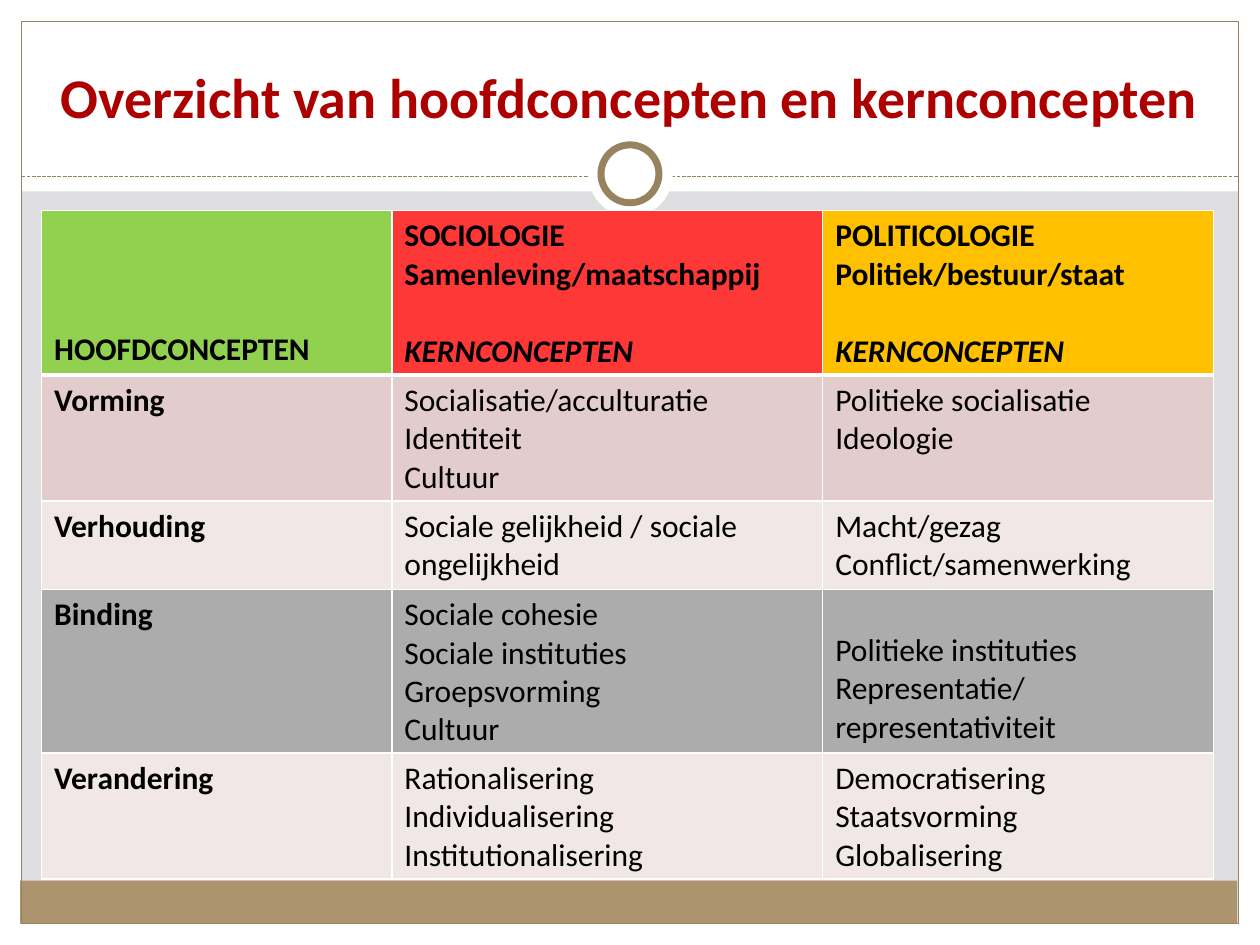
from typing import NamedTuple, Optional

from lxml import etree
from pptx import Presentation
from pptx import util as u
from pptx.dml.color import RGBColor
from pptx.enum import dml, shapes, text
from pptx.oxml import ns

FONT = "Calibri"
WHITE = RGBColor(0xFF, 0xFF, 0xFF)
BLACK = RGBColor(0x00, 0x00, 0x00)
GREY = RGBColor(0xDE, 0xDE, 0xE0)
TAN = RGBColor(0xAC, 0x95, 0x6E)
BROWN = RGBColor(0x98, 0x83, 0x61)
DARK_RED = RGBColor(0xAD, 0x01, 0x01)
GREEN = RGBColor(0x92, 0xD0, 0x50)
RED = RGBColor(0xFE, 0x37, 0x37)
GOLD = RGBColor(0xFF, 0xC0, 0x00)
PINK = RGBColor(0xE3, 0xCC, 0xCC)
PALE_PINK = RGBColor(0xF1, 0xE7, 0xE7)
MID_GREY = RGBColor(0xAC, 0xAC, 0xAC)

RECT = shapes.MSO_SHAPE.RECTANGLE
OVAL = shapes.MSO_SHAPE.OVAL
TOP = text.MSO_ANCHOR.TOP
BOTTOM = text.MSO_ANCHOR.BOTTOM


class Decor(NamedTuple):
    preset: shapes.MSO_SHAPE
    left: float
    top: float
    width: float
    height: float
    fill: Optional[RGBColor] = WHITE
    line_width: float = 0


class Entry(NamedTuple):
    wording: str
    fill: RGBColor
    bold: bool = False
    anchor: text.MSO_ANCHOR = TOP


class Concept(NamedTuple):
    name: str
    height: float
    fill: RGBColor
    sociology: str
    politics: str
    politics_anchor: text.MSO_ANCHOR = TOP


BACKDROP = [
    Decor(RECT, 0, 7.33, 10, 0.17),
    Decor(RECT, 0, 0, 10, 1.52),
    Decor(RECT, 0, 0, 0.17, 7.5),
    Decor(RECT, 9.83, 0, 0.17, 7.5),
    Decor(RECT, 0.16, 6.99, 9.66, 0.34, TAN),
    Decor(RECT, 0.17, 0.17, 9.66, 7.16, None, 0.75),
]
RING = [
    Decor(OVAL, 4.67, 1.05, 0.67, 0.67),
    Decor(OVAL, 4.77, 1.15, 0.46, 0.46, WHITE, 4),
]

SUBHEADING = "KERNCONCEPTEN"
HEADER = [
    Entry("HOOFDCONCEPTEN", GREEN, True, BOTTOM),
    Entry(f"SOCIOLOGIE\nSamenleving/maatschappij\n{SUBHEADING}", RED, True),
    Entry(f"POLITICOLOGIE\nPolitiek/bestuur/staat\n{SUBHEADING}", GOLD, True),
]
CONCEPTS = [
    Concept("Vorming", 1, PINK,
            "Socialisatie/acculturatie\nIdentiteit\nCultuur",
            "Politieke socialisatie\nIdeologie"),
    Concept("Verhouding", 0.7, PALE_PINK,
            "Sociale gelijkheid / sociale ongelijkheid",
            "Macht/gezag\nConflict/samenwerking"),
    Concept("Binding", 1.3, MID_GREY,
            "Sociale cohesie\nSociale instituties\nGroepsvorming\nCultuur",
            "Politieke instituties\nRepresentatie/\nrepresentativiteit", BOTTOM),
    Concept("Verandering", 1, PALE_PINK,
            "Rationalisering\nIndividualisering\nInstitutionalisering",
            "Democratisering\nStaatsvorming\nGlobalisering"),
]
COLUMN_WIDTHS = [2.78, 3.42, 3.1]
HEADER_HEIGHT = 1.3


def style_runs(paragraph, size: float, color: RGBColor, bold: bool, italic: bool = False) -> None:
    for run in paragraph.runs:
        font = run.font
        font.name, font.size, font.bold, font.italic = FONT, u.Pt(size), bold, italic
        font.color.rgb = color


def draw_decor(slide, decor: Decor) -> None:
    shape = slide.shapes.add_shape(decor.preset, *map(u.Inches, decor[1:5]))
    shape.shadow.inherit = False
    if decor.fill is None:
        shape.fill.background()
    else:
        shape.fill.solid()
        shape.fill.fore_color.rgb = decor.fill
    if decor.line_width:
        shape.line.color.rgb = BROWN
        shape.line.width = u.Pt(decor.line_width)
    else:
        shape.line.fill.background()


def draw_divider(slide) -> None:
    y = u.Inches(1.4)
    divider = slide.shapes.add_connector(
        shapes.MSO_CONNECTOR.STRAIGHT, u.Inches(0.17), y, u.Inches(9.83), y)
    divider.line.color.rgb = BROWN
    divider.line.width = u.Pt(0.75)
    divider.line.dash_style = dml.MSO_LINE.SQUARE_DOT
    etree.SubElement(divider.element.spPr, ns.qn("a:effectLst"))


def draw_title(slide, wording: str) -> None:
    title = slide.shapes.add_textbox(*map(u.Inches, (0.33, 0.25, 9.33, 0.83)))
    frame = title.text_frame
    frame.word_wrap = True
    frame.vertical_anchor = BOTTOM
    frame.text = wording
    frame.paragraphs[0].alignment = text.PP_ALIGN.CENTER
    style_runs(frame.paragraphs[0], 32, DARK_RED, True)


def set_borders(cell, top: float, bottom: float) -> None:
    properties = cell._tc.get_or_add_tcPr()
    for side, width in (("L", 1), ("R", 1), ("T", top), ("B", bottom)):
        border = etree.SubElement(properties, ns.qn(f"a:ln{side}"), w=str(u.Pt(width)))
        fill = etree.SubElement(border, ns.qn("a:solidFill"))
        etree.SubElement(fill, ns.qn("a:srgbClr"), val=str(WHITE))


def fill_cell(cell, entry: Entry, top: float, bottom: float) -> None:
    set_borders(cell, top, bottom)
    cell.fill.solid()
    cell.fill.fore_color.rgb = entry.fill
    cell.vertical_anchor = entry.anchor
    cell.text_frame.text = entry.wording
    for paragraph in cell.text_frame.paragraphs:
        is_subheading = paragraph.text == SUBHEADING
        if is_subheading:
            paragraph.space_before = u.Pt(22)
        style_runs(paragraph, 18, BLACK, entry.bold, is_subheading)


def draw_table(slide) -> None:
    rows = [HEADER] + [
        [Entry(c.name, c.fill, True), Entry(c.sociology, c.fill),
         Entry(c.politics, c.fill, anchor=c.politics_anchor)]
        for c in CONCEPTS
    ]
    heights = [HEADER_HEIGHT] + [c.height for c in CONCEPTS]
    table = slide.shapes.add_table(
        len(rows), len(COLUMN_WIDTHS), u.Inches(0.33), u.Inches(1.67),
        u.Inches(sum(COLUMN_WIDTHS)), u.Inches(sum(heights))).table
    for column, width in zip(table.columns, COLUMN_WIDTHS):
        column.width = u.Inches(width)
    for index, (entries, height) in enumerate(zip(rows, heights)):
        table.rows[index].height = u.Inches(height)
        top, bottom = 3 if index == 1 else 1, 3 if index == 0 else 1
        for cell, entry in zip(table.rows[index].cells, entries):
            fill_cell(cell, entry, top, bottom)


def main() -> None:
    deck = Presentation()
    deck.slide_width, deck.slide_height = u.Inches(10), u.Inches(7.5)
    slide = deck.slides.add_slide(deck.slide_layouts[6])
    slide.background.fill.solid()
    slide.background.fill.fore_color.rgb = GREY
    for decor in BACKDROP:
        draw_decor(slide, decor)
    draw_divider(slide)
    for decor in RING:
        draw_decor(slide, decor)
    draw_title(slide, "Overzicht van hoofdconcepten en kernconcepten")
    draw_table(slide)
    deck.save("out.pptx")


if __name__ == "__main__":
    main()
